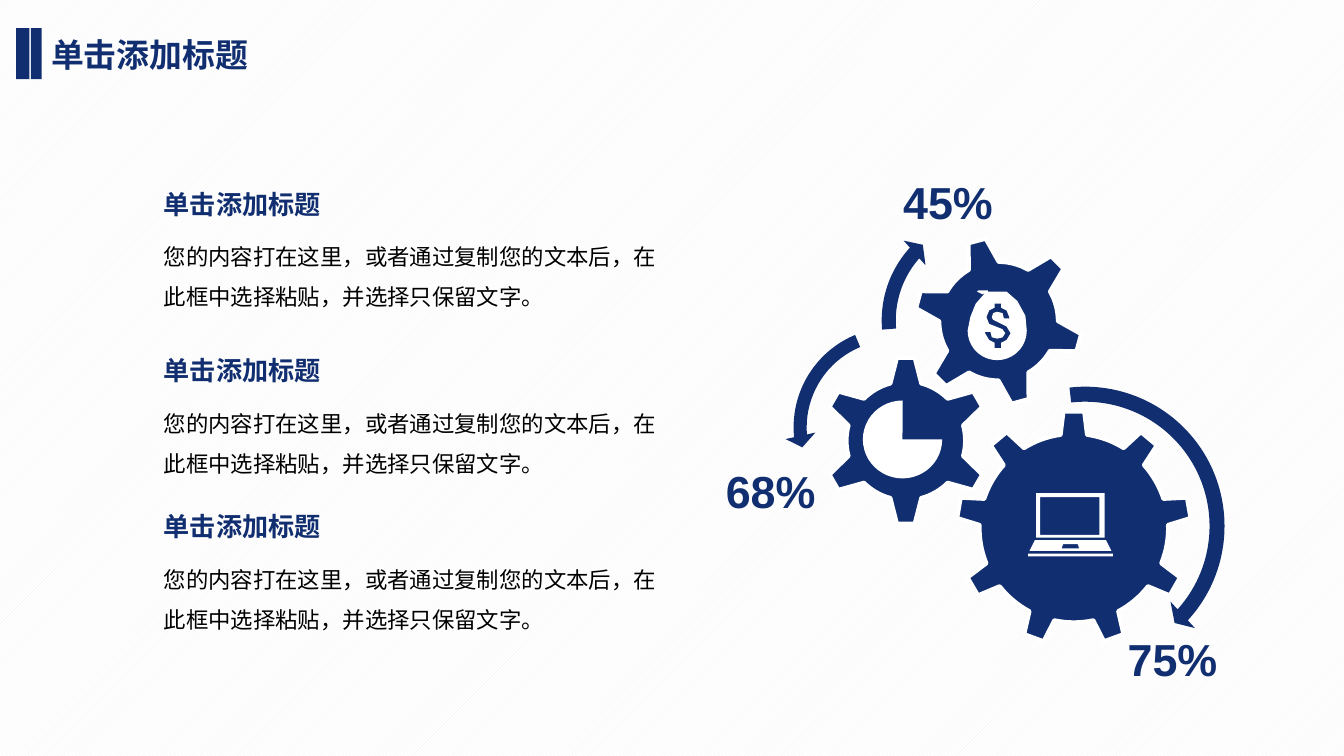
"""Build a slide with three text blocks and a trio of linked gears."""
from math import cos, radians, sin

from lxml import etree
from pptx import Presentation
from pptx.dml.color import RGBColor
from pptx.enum.dml import MSO_PATTERN
from pptx.enum.shapes import MSO_SHAPE
from pptx.enum.text import MSO_ANCHOR, MSO_AUTO_SIZE, PP_ALIGN
from pptx.oxml.ns import qn
from pptx.util import Pt

PX = 9144
WIDE = 1000
HIGH = WIDE * 9 / 16
NAVY = RGBColor(0x11, 0x2F, 0x70)
WHITE = RGBColor(0xFF, 0xFF, 0xFF)
BLACK = RGBColor(0x00, 0x00, 0x00)
PALE = RGBColor(0xF2, 0xF2, 0xF2)
HAN, LATIN = "Noto Sans CJK SC", "Arial"
RECT, PIE = MSO_SHAPE.RECTANGLE, MSO_SHAPE.PIE
RIGHT, LEFT = MSO_SHAPE.CIRCULAR_ARROW, MSO_SHAPE.LEFT_CIRCULAR_ARROW
HATCH = MSO_PATTERN.LIGHT_UPWARD_DIAGONAL
TOP, START = MSO_ANCHOR.TOP, PP_ALIGN.LEFT
GROW = MSO_AUTO_SIZE.SHAPE_TO_FIT_TEXT

HEAD = "单击添加标题"
BODY = "您的内容打在这里，或者通过复制您的文本后，在此框中选择粘贴，并选择只保留文字。"
ROWS = (135, 259, 375)
BARS = ((12, 10), (23, 8))
RATES = (("45%", 665, 126), ("68%", 533, 341), ("75%", 832, 466))
ARROWS = (
    (RIGHT, (696, 280, 223, 223), (0.05, 2.99, 25.39, 158.12, 0.06)),
    (LEFT, (584, 237, 162, 162), (0.06, 4.3, 104.89, 148.38, 0.07)),
    (RIGHT, (649, 151, 175, 175), (0.06, 3.94, 133.14, 105.08, 0.07)),
)
GEARS = (
    (799, 393, 9, 87, 70, 5, 8, 0),
    (674, 328, 6, 62, 44, 6, 15, 0),
    (743, 239, 6, 62, 44, 6, 15, -15),
)
DOLLAR = (
    (749, 253), (745, 255), (745, 259), (740, 259), (740, 255), (736, 253),
    (733, 248), (733, 247), (737, 247), (738, 251), (742, 252), (746, 251),
    (748, 248), (746, 245), (741, 243), (736, 241), (734, 236), (736, 231),
    (740, 229), (740, 226), (745, 226), (745, 229), (749, 231), (751, 236),
    (751, 237), (747, 237), (746, 233), (742, 232), (739, 233), (738, 236),
    (739, 238), (743, 240), (749, 243), (752, 248),
)
BAG_LEFT = (
    (749, 217), (735, 217), (735, 216), (728, 216), (727, 217), (731, 219),
    (733, 218), (726, 226), (722, 236),
)
BAG_RIGHT = ((763, 235), (757, 224))


def emu(*sizes):
    """Turn px lengths into EMU."""
    return [round(size * PX) for size in sizes]


def arc(mid, radius, first, last, steps):
    """Give points along an arc, in degrees clockwise from the right."""
    turns = [radians(first + (last - first) * i / steps) for i in range(steps + 1)]
    return [(mid[0] + radius * cos(t), mid[1] + radius * sin(t)) for t in turns]


def box(left, top, right, low):
    """Give the corners of a rectangle."""
    return [(left, top), (right, top), (right, low), (left, low)]


def paint(shape, color):
    """Fill a shape flat, with neither line nor shadow."""
    shape.shadow.inherit = False
    shape.fill.solid()
    shape.fill.fore_color.rgb = color
    shape.line.fill.background()


def add_form(slide, kind, place, color, adjusts=()):
    """Add a preset shape."""
    shape = slide.shapes.add_shape(kind, *emu(*place))
    for i, value in enumerate(adjusts):
        shape.adjustments[i] = value
    paint(shape, color)


def add_free(slide, rings, color):
    """Add one outline made of closed rings."""
    first, *others = [[emu(*point) for point in ring] for ring in rings]
    pen = slide.shapes.build_freeform(*first[0], scale=1.0)
    pen.add_line_segments(first[1:], close=True)
    for ring in others:
        pen.move_to(*ring[0])
        pen.add_line_segments(ring[1:], close=True)
    shape = pen.convert_to_shape()
    paint(shape, color)
    return shape


def add_gear(slide, x, y, teeth, tip, root, slim, broad, turn):
    """Add a gear with evenly spaced teeth and a white rim."""
    step = 360 / teeth
    ring = []
    for i in range(teeth):
        angle = turn - 90 + i * step
        ring += arc((x, y), tip, angle - slim, angle + slim, 1)
        ring += arc((x, y), root, angle + broad, angle + step - broad, 8)
    gear = add_free(slide, [ring], NAVY)
    gear.line.color.rgb = WHITE
    gear.line.width = Pt(2)


def add_laptop(slide):
    """Add the laptop sign."""
    base = [(770, 402), (766, 410), (827, 410), (823, 402)]
    notch = [(790, 408), (791, 405), (802, 405), (803, 408)]
    lid, screen = box(771, 367, 822, 400), box(774, 370, 818, 398)
    foot = box(765, 412, 828, 414)
    add_free(slide, [base, notch, lid, screen, foot], WHITE)


def add_bag(slide):
    """Add the money bag sign."""
    bag = [*BAG_LEFT, *arc((742, 246), 22, 180, 0, 18), *BAG_RIGHT]
    add_free(slide, [bag, DOLLAR], WHITE)


def write(shape, text, size, color, font=HAN, bold=True, wrap=False):
    """Set and format the text of a shape."""
    frame = shape.text_frame
    frame.text = text
    frame.word_wrap = wrap
    frame.auto_size = GROW
    frame.vertical_anchor = TOP
    line = frame.paragraphs[0]
    line.alignment = START
    run = line.runs[0]
    run.font.size = Pt(size)
    run.font.bold = bold
    run.font.color.rgb = color
    run.font.name = font
    etree.SubElement(run.font._element, qn("a:ea")).set("typeface", font)
    return frame


def add_title(slide):
    """Place the slide title and its two bars."""
    title = slide.shapes.title
    title.left, title.top, title.width, title.height = emu(28, 21, 242, 40)
    write(title, HEAD, 17.6, NAVY, wrap=True)
    for left, width in BARS:
        add_form(slide, RECT, (left, 21, width, 38), NAVY)


def add_block(slide, top):
    """Add a heading with its text below."""
    body = slide.shapes.add_textbox(*emu(112, top + 31, 390, 67))
    frame = write(body, BODY, 12, BLACK, bold=False, wrap=True)
    frame.paragraphs[0].line_spacing = 1.5
    head = slide.shapes.add_textbox(*emu(112, top, 138, 34))
    write(head, HEAD, 14, NAVY)


def add_rate(slide, text, left, top):
    """Add a percentage label."""
    label = slide.shapes.add_textbox(*emu(left, top, 82, 48))
    frame = write(label, text, 24, NAVY, LATIN)
    frame.margin_left = frame.margin_right = 7 * PX
    frame.margin_top = frame.margin_bottom = 4 * PX


def main():
    """Build and save the slide."""
    deck = Presentation()
    deck.slide_width, deck.slide_height = emu(WIDE, HIGH)
    slide = deck.slides.add_slide(deck.slide_layouts[5])
    fill = slide.background.fill
    fill.patterned()
    fill.pattern = HATCH
    fill.fore_color.rgb = PALE
    fill.back_color.rgb = WHITE
    add_title(slide)
    for top in ROWS:
        add_block(slide, top)
    for kind, place, adjusts in ARROWS:
        add_form(slide, kind, place, NAVY, adjusts)
    for gear in GEARS:
        add_gear(slide, *gear)
    add_laptop(slide)
    add_form(slide, PIE, (642, 298, 59, 58), WHITE)
    add_bag(slide)
    for rate in RATES:
        add_rate(slide, *rate)
    deck.save("out.pptx")


if __name__ == "__main__":
    main()
